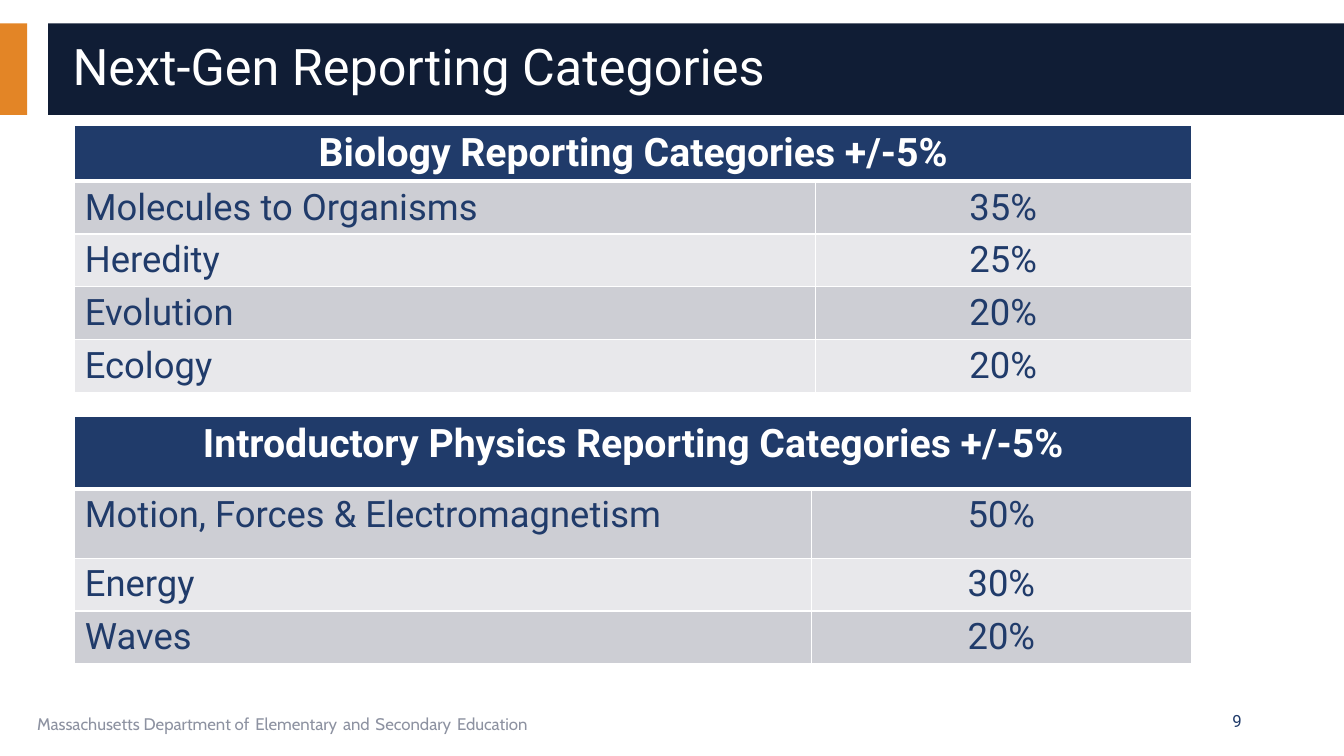
import pptx
import pptx.util
import pptx.dml.color
import pptx.enum.shapes
import pptx.enum.text
import pptx.oxml
import pptx.oxml.ns
from dataclasses import dataclass

Pt = pptx.util.Pt
ALIGN = pptx.enum.text.PP_ALIGN
ANCHOR = pptx.enum.text.MSO_ANCHOR


@dataclass(frozen=True)
class Theme:
    orange: str = "E38526"
    midnight: str = "101D35"
    navy: str = "203B6A"
    white: str = "FFFFFF"
    gray: str = "8D92A1"
    bands: tuple = ("CDCED4", "E8E8EB")
    body_font: str = "Roboto"
    footer_font: str = "Cabin"
    title_size: float = 36
    header_size: float = 28
    cell_size: float = 26
    small_size: float = 12
    gap_size: float = 18
    thin_border: float = 1
    thick_border: float = 3


class SlideBuilder:
    def __init__(self, slide, theme):
        self.slide = slide
        self.theme = theme

    def color(self, value):
        return pptx.dml.color.RGBColor.from_string(value)

    def add_text(self, paragraph, text, color, **font_format):
        run = paragraph.add_run()
        run.text = text
        values = {"name": self.theme.body_font, **font_format}
        for name, value in values.items():
            setattr(run.font, name, value)
        run.font.color.rgb = self.color(color)

    def bar(self, left, top, width, height, color):
        shape = self.slide.shapes.add_shape(
            pptx.enum.shapes.MSO_SHAPE.RECTANGLE, Pt(left), Pt(top), Pt(width), Pt(height))
        shape.shadow.inherit = False
        shape.fill.solid()
        shape.fill.fore_color.rgb = self.color(color)
        shape.line.fill.background()

    def title(self, text, left, top, width, height):
        shape = self.slide.shapes.title
        box = {"left": left, "top": top, "width": width, "height": height}
        for name, value in box.items():
            setattr(shape, name, Pt(value))
        frame_format = {"vertical_anchor": ANCHOR.MIDDLE, "word_wrap": True,
                        "auto_size": pptx.enum.text.MSO_AUTO_SIZE.NONE}
        for name, value in frame_format.items():
            setattr(shape.text_frame, name, value)
        paragraph = shape.text_frame.paragraphs[0]
        paragraph.alignment = ALIGN.LEFT
        paragraph.line_spacing = 0.9
        self.add_text(paragraph, text, self.theme.white, size=Pt(self.theme.title_size))
        self.slide.shapes.element.append(shape.element)

    def text_box(self, left, top, width, height, alignment, anchor):
        shape = self.slide.shapes.add_textbox(Pt(left), Pt(top), Pt(width), Pt(height))
        shape.text_frame.word_wrap = True
        shape.text_frame.vertical_anchor = anchor
        paragraph = shape.text_frame.paragraphs[0]
        paragraph.alignment = alignment
        return paragraph

    def footer(self, phrases, left, top, width, height):
        paragraph = self.text_box(left, top, width, height, ALIGN.LEFT, ANCHOR.TOP)
        font = self.theme.footer_font
        for index, phrase in enumerate(phrases):
            if index:
                self.add_text(paragraph, " ", self.theme.navy, name=font, size=Pt(self.theme.gap_size))
            self.add_text(paragraph, phrase, self.theme.gray, name=font, size=Pt(self.theme.small_size))

    def page_number(self, text, left, top, width, height):
        paragraph = self.text_box(left, top, width, height, ALIGN.RIGHT, ANCHOR.MIDDLE)
        self.add_text(paragraph, text, self.theme.navy, size=Pt(self.theme.small_size))

    def borders(self, cell, top, bottom):
        thin = self.theme.thin_border
        properties = cell._tc.get_or_add_tcPr()
        for side, width in {"L": thin, "R": thin, "T": top, "B": bottom}.items():
            properties.append(pptx.oxml.parse_xml(
                f'<a:ln{side} {pptx.oxml.ns.nsdecls("a")} w="{Pt(width)}"><a:solidFill>'
                f'<a:srgbClr val="{self.theme.white}"/></a:solidFill></a:ln{side}>'))

    def cell(self, cell, text, row, column):
        theme = self.theme
        header = row == 0
        self.borders(cell, theme.thick_border if row == 1 else theme.thin_border,
                     theme.thick_border if header else theme.thin_border)
        cell.fill.solid()
        fill = theme.navy if header else theme.bands[(row - 1) % 2]
        cell.fill.fore_color.rgb = self.color(fill)
        if text:
            paragraph = cell.text_frame.paragraphs[0]
            paragraph.alignment = ALIGN.CENTER if header or column else ALIGN.LEFT
            self.add_text(paragraph, text, theme.white if header else theme.navy, bold=header,
                          size=Pt(theme.header_size if header else theme.cell_size))

    def table(self, heading, shares, left, top, column_widths, row_heights):
        rows = [(heading, ""), *shares]
        table = self.slide.shapes.add_table(
            len(rows), len(column_widths), Pt(left), Pt(top),
            Pt(sum(column_widths)), Pt(sum(row_heights))).table
        for column, width in zip(table.columns, column_widths):
            column.width = Pt(width)
        for row, height in zip(table.rows, row_heights):
            row.height = Pt(height)
        for row, texts in enumerate(rows):
            for column, text in enumerate(texts):
                self.cell(table.cell(row, column), text, row, column)
        table.cell(0, 0).merge(table.cell(0, 1))


def main():
    theme = Theme()
    presentation = pptx.Presentation()
    presentation.slide_width = Pt(960)
    presentation.slide_height = Pt(540)
    builder = SlideBuilder(presentation.slides.add_slide(presentation.slide_layouts[5]), theme)

    builder.bar(0, 16.6, 19.5, 65.5, theme.orange)
    builder.bar(34.4, 16.6, 925.6, 65.5, theme.midnight)
    builder.title("Next-Gen Reporting Categories", 44.6, 23, 895.7, 53.3)
    builder.table(
        "Biology Reporting Categories +/-5%",
        [("Molecules to Organisms", "35%"), ("Heredity", "25%"),
         ("Evolution", "20%"), ("Ecology", "20%")],
        53.4, 89.5, [529, 268.6], [39.5] + [37.6] * 4)
    builder.table(
        "Introductory Physics Reporting Categories +/-5%",
        [("Motion, Forces & Electromagnetism", "50%"), ("Energy", "30%"), ("Waves", "20%")],
        53.4, 297.6, [526.2, 271.4], [51.6, 49.5, 37.6, 37.6])
    builder.footer(["Massachusetts Department of", "Elementary", "and", "Secondary", "Education"],
                   19.4, 500.4, 607.7, 29)
    builder.page_number("9", 678.2, 500.4, 216, 28.8)
    presentation.save("out.pptx")


if __name__ == "__main__":
    main()
